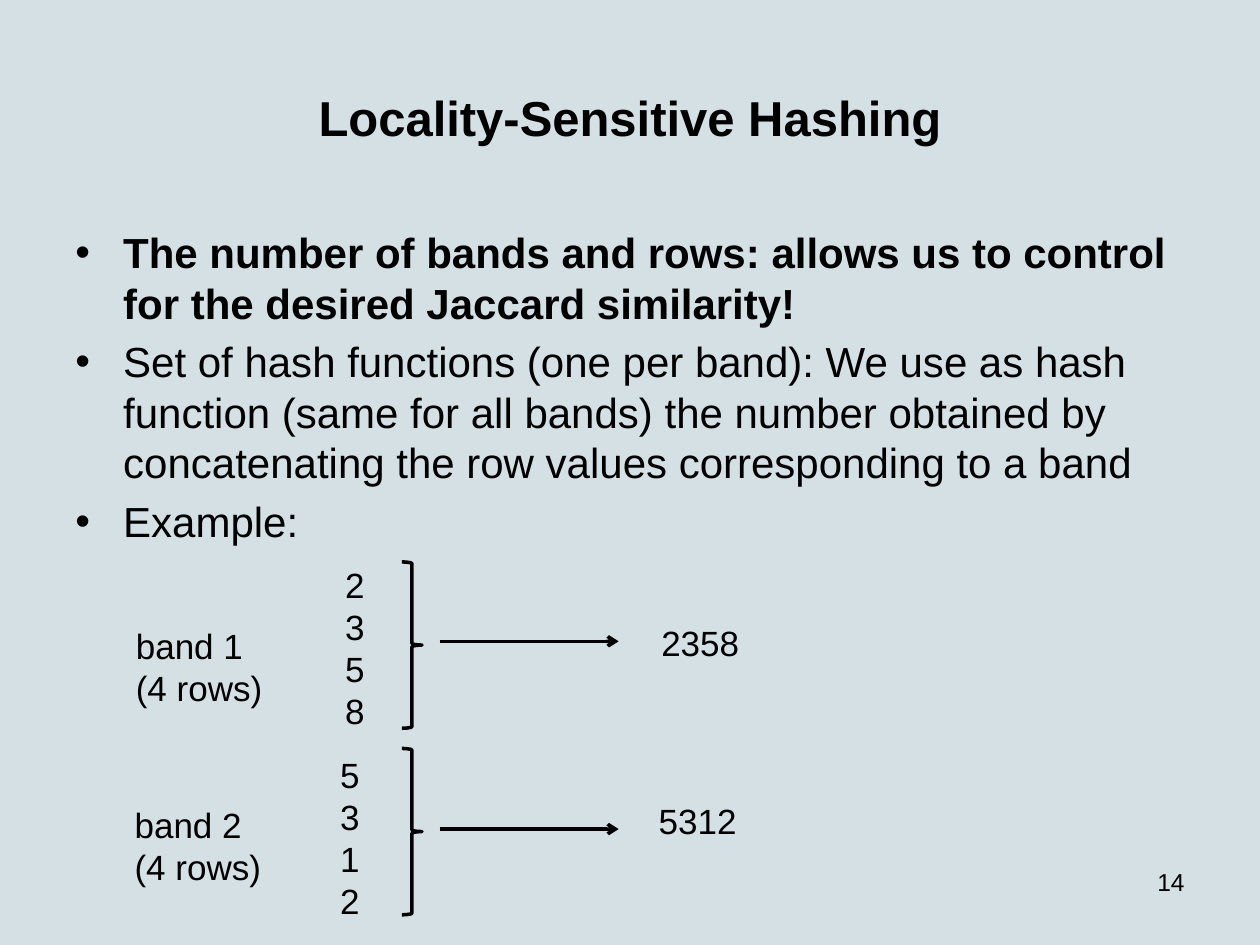
import pptx
import pptx.dml.color
import pptx.enum.shapes
import pptx.enum.text
import pptx.oxml
import pptx.oxml.ns
import pptx.util

BLACK = "000000"
BACKGROUND = "D5E0E5"
FONT = "Arial"
ALIGN = pptx.enum.text.PP_ALIGN
ANCHOR = pptx.enum.text.MSO_ANCHOR

# Columns of the band diagram, in inches
BRACE_LEFT, BRACE_WIDTH, BRACE_HEIGHT = 3.19, 0.16, 1.32
ARROW_START, ARROW_END = 3.49, 4.91

BULLETS = [
    ("The number of bands and rows: allows us to control for the desired "
     "Jaccard similarity!", True),
    ("Set of hash functions (one per band): We use as hash function (same for "
     "all bands) the number obtained by concatenating the row values "
     "corresponding to a band", False),
    ("Example:", False),
]

# Name, row values, then left and top of the label, the values and the hash,
# and the tops of the brace and the arrow
BANDS = [
    ("band 1", "2358", (0.98, 4.91), (2.64, 4.42), (5.15, 4.88), 4.46, 5.09),
    ("band 2", "5312", (0.97, 6.33), (2.6, 5.93), (5.13, 6.3), 5.94, 6.58),
]


def colour(value):
    return pptx.dml.color.RGBColor.from_string(value)


def inches(*lengths):
    return [pptx.util.Inches(length) for length in lengths]


def add_xml(parent, tag, **attributes):
    element = pptx.oxml.parse_xml(
        f'<a:{tag} {pptx.oxml.ns.nsdecls("a")}/>')
    for name, value in attributes.items():
        element.set(name, value)
    parent.append(element)


def add_frame(page, left, top, width, height, anchor=ANCHOR.TOP):
    box = page.shapes.add_textbox(*inches(left, top, width, height))
    box.text_frame.word_wrap = True
    box.text_frame.vertical_anchor = anchor
    return box.text_frame


def write(para, text, size=20, bold=False, align=ALIGN.LEFT, before=0, after=0):
    para.alignment = align
    para.space_before = pptx.util.Pt(before)
    para.space_after = pptx.util.Pt(after)
    span = para.add_run()
    span.text = text
    span.font.name = FONT
    span.font.size = pptx.util.Pt(size)
    span.font.bold = bold
    span.font.color.rgb = colour(BLACK)


def write_lines(frame, lines, **style):
    for index, line in enumerate(lines):
        para = frame.add_paragraph() if index else frame.paragraphs[0]
        write(para, line, **style)


def add_bullets(page, items):
    frame = add_frame(page, 0.5, 1.75, 9, 4.95)
    for index, (text, bold) in enumerate(items):
        para = frame.add_paragraph() if index else frame.paragraphs[0]
        write(para, text, size=24, bold=bold, before=2.4, after=2.4)
        properties = para._p.get_or_add_pPr()
        indent = pptx.util.Inches(0.38)
        properties.set("marL", str(indent))
        properties.set("indent", str(-indent))
        add_xml(properties, "buFont", typeface=FONT)
        add_xml(properties, "buChar", char="•")


def style_line(line):
    line.color.rgb = colour(BLACK)
    line.width = pptx.util.Pt(2)


def add_brace(page, top):
    brace = page.shapes.add_shape(
        pptx.enum.shapes.MSO_SHAPE.RIGHT_BRACE,
        *inches(BRACE_LEFT, top, BRACE_WIDTH, BRACE_HEIGHT))
    brace.shadow.inherit = False
    brace.fill.background()
    style_line(brace.line)


def add_arrow(page, level):
    arrow = page.shapes.add_connector(
        pptx.enum.shapes.MSO_CONNECTOR.STRAIGHT,
        *inches(ARROW_START, level, ARROW_END, level))
    style_line(arrow.line)
    add_xml(arrow.line._get_or_add_ln(), "tailEnd", type="arrow")
    add_xml(arrow._element.spPr, "effectLst")


def add_band(page, name, values, label_at, values_at, hash_at, brace_top, level):
    write_lines(add_frame(page, *label_at, 1.43, 0.77), [name, "(4 rows)"])
    write_lines(add_frame(page, *values_at, 0.55, 1.45), values)
    write_lines(add_frame(page, *hash_at, 1.26, 0.44), [values])
    add_brace(page, brace_top)
    add_arrow(page, level)


def main():
    deck = pptx.Presentation()
    deck.slide_width, deck.slide_height = inches(10, 7.5)
    page = deck.slides.add_slide(deck.slide_layouts[6])
    page.background.fill.solid()
    page.background.fill.fore_color.rgb = colour(BACKGROUND)

    # Title and bullets
    title = add_frame(page, 0.5, 0.3, 9, 1.25, anchor=ANCHOR.MIDDLE)
    write_lines(title, ["Locality-Sensitive Hashing"], size=28, bold=True,
                align=ALIGN.CENTER)
    add_bullets(page, BULLETS)

    # Example bands with their hash values
    for band in BANDS:
        add_band(page, *band)

    # Page number
    number = add_frame(page, 7.17, 6.83, 2.33, 0.52)
    write_lines(number, ["14"], size=14, align=ALIGN.RIGHT, before=16)

    deck.save("out.pptx")


if __name__ == "__main__":
    main()
